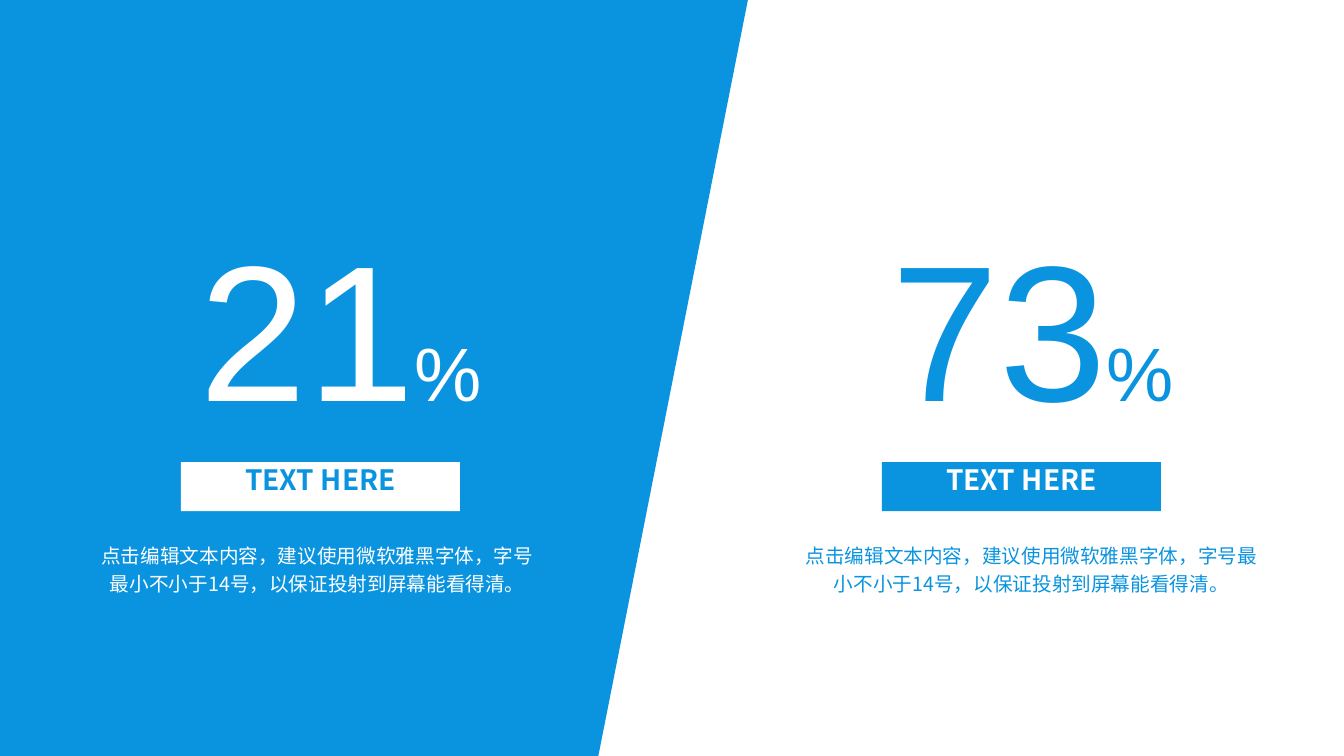
from pptx import Presentation
from pptx.dml.color import RGBColor
from pptx.enum.shapes import MSO_SHAPE as Shape
from pptx.enum.text import MSO_ANCHOR as Anchor, MSO_AUTO_SIZE as AutoSize, PP_ALIGN as Align
from pptx.oxml.ns import qn
from pptx.util import Pt

PX = 914400 / 100.8
WIDTH, HEIGHT = 1344, 756
BLUE, WHITE = "0A94E0", "FFFFFF"
LATIN, CHINESE = "Arial", "Noto Sans CJK SC"
DESCRIPTION = "点击编辑文本内容，建议使用微软雅黑字体，字号最小不小于14号，以保证投射到屏幕能看得清。"


def px(*lengths):
    return [round(length * PX) for length in lengths]


def color(value):
    return RGBColor.from_string(value)


def set_values(target, values):
    for name, value in values.items():
        setattr(target, name, value)


def add_run(paragraph, text, fill, font, size, bold=False):
    run = paragraph.add_run()
    run.text = text
    set_values(run.font, {"name": font, "size": Pt(size), "bold": bold})
    run.font.color.rgb = color(fill)
    if font == CHINESE:
        properties = run.font._element
        east_asian = properties.makeelement(qn("a:ea"), {"typeface": font})
        properties.find(qn("a:latin")).addnext(east_asian)


def add_block(slide, preset, box, fill):
    shape = slide.shapes.add_shape(preset, *px(*box))
    shape.shadow.inherit = False
    shape.fill.solid()
    shape.fill.fore_color.rgb = color(fill)
    shape.line.fill.background()
    return shape


def add_text(slide, box, wrap):
    frame = slide.shapes.add_textbox(*px(*box)).text_frame
    set_values(frame, {"word_wrap": wrap, "auto_size": AutoSize.SHAPE_TO_FIT_TEXT})
    return frame.paragraphs[0]


def add_backdrop(slide, box):
    left, top, width, height = box
    turned = (left + (width - height) / 2, top + (height - width) / 2, height, width)
    shape = add_block(slide, Shape.FLOWCHART_MANUAL_INPUT, turned, BLUE)
    shape.rotation = 90
    shape._element.spPr.find(qn("a:xfrm")).set("flipH", "1")


def add_label(slide, box, fill, ink):
    shape = add_block(slide, Shape.ROUNDED_RECTANGLE, box, fill)
    shape.adjustments[0] = 0
    frame = shape.text_frame
    set_values(frame, {"word_wrap": True, "vertical_anchor": Anchor.TOP,
                       "margin_top": 0, "margin_bottom": 0})
    paragraph = frame.paragraphs[0]
    paragraph.alignment = Align.CENTER
    add_run(paragraph, "TEXT HERE", ink, CHINESE, 20, True)


def add_statistic(slide, box, number, ink, paper, label_indent, number_indent):
    left, top, width, height = box
    paragraph = add_text(slide, (left, top + 331, width, height - 331), True)
    set_values(paragraph, {"alignment": Align.CENTER, "line_spacing": 1.2})
    add_run(paragraph, DESCRIPTION, ink, CHINESE, 14)

    add_label(slide, (left + label_indent, top + 259, 279, 49), ink, paper)

    paragraph = add_text(slide, (left + number_indent, top, 309, 244), False)
    add_run(paragraph, number, ink, LATIN, 138)
    add_run(paragraph, "%", ink, LATIN, 54)


def main():
    presentation = Presentation()
    slide_width, slide_height = px(WIDTH, HEIGHT)
    set_values(presentation, {"slide_width": slide_width, "slide_height": slide_height})
    slide = presentation.slides.add_slide(presentation.slide_layouts[6])
    add_backdrop(slide, (0, 0, 748, HEIGHT))
    add_statistic(slide, (83, 203, 469, 399), "21", WHITE, BLUE, 98, 107)
    add_statistic(slide, (795, 203, 473, 399), "73", BLUE, WHITE, 87, 87)
    presentation.save("out.pptx")


if __name__ == "__main__":
    main()
